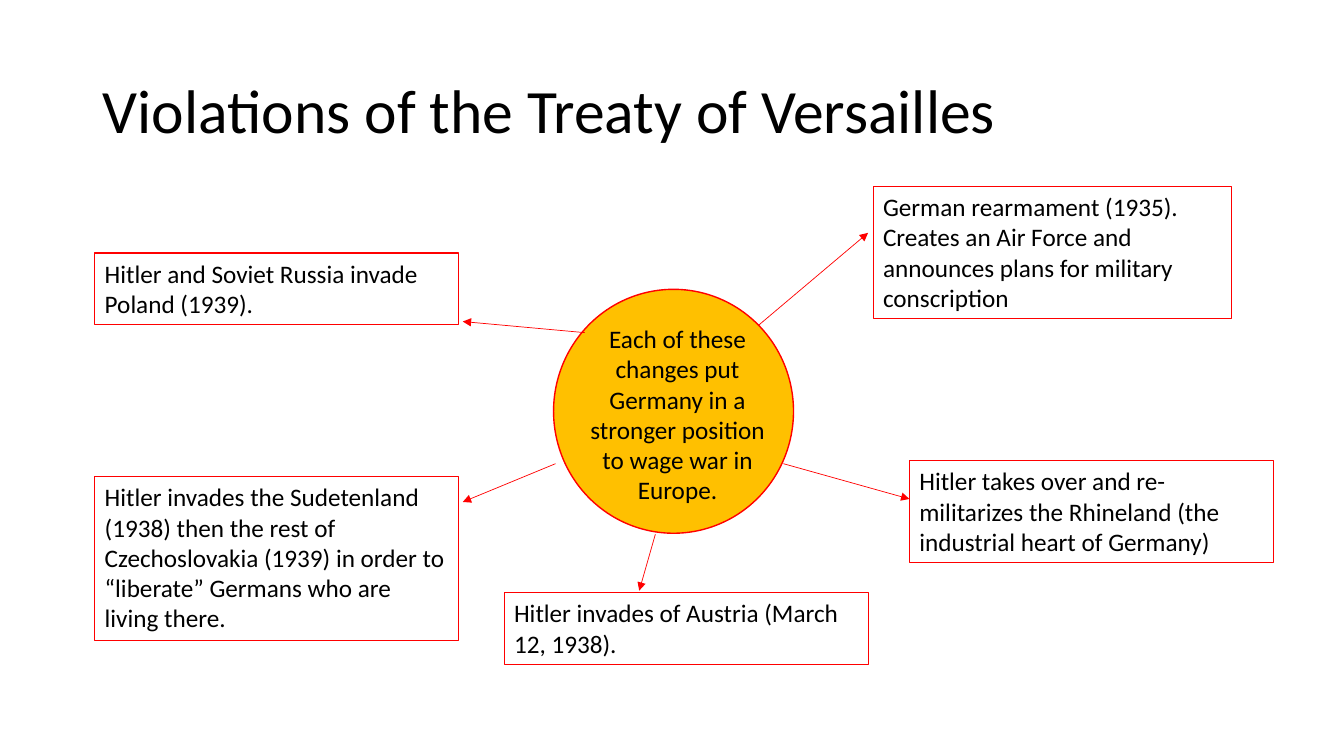
"""Build a slide mapping the violations of the Treaty of Versailles around a central point."""

import dataclasses
import typing

import pptx
import pptx.dml.color
import pptx.enum.shapes
import pptx.enum.text
import pptx.oxml
import pptx.oxml.ns
import pptx.shapes.base
import pptx.shapes.connector
import pptx.slide
import pptx.util

Inches = pptx.util.Inches
Anchor = pptx.enum.text.MSO_ANCHOR
Align = pptx.enum.text.PP_ALIGN
AutoSize = pptx.enum.text.MSO_AUTO_SIZE


@dataclasses.dataclass(frozen=True)
class Theme:
    """Colours, font and sizes of the slide."""

    font: str = "Calibri"
    ink: str = "000000"
    accent: str = "FF0000"
    hub: str = "FFC000"
    title_size: float = 44
    body_size: float = 18
    hub_line: float = 1
    note_line: float = 0.75
    arrow_line: float = 0.5


@dataclasses.dataclass(frozen=True)
class Box:
    """Position and size in inches."""

    left: float
    top: float
    width: float
    height: float

    def lengths(self) -> list[pptx.util.Length]:
        """Return the box as slide lengths."""
        return [Inches(value) for value in dataclasses.astuple(self)]


@dataclasses.dataclass(frozen=True)
class Violation:
    """A bordered note and the arrow that points to it."""

    text: str
    box: Box
    arrow_start: tuple[float, float]
    arrow_end: tuple[float, float]


THEME = Theme()
TITLE = "Violations of the Treaty of Versailles"
TITLE_BOX = Box(0.92, 0.4, 11.5, 1.45)
HUB_TEXT = "Each of these changes put Germany in a stronger position to wage war in Europe."
HUB_BOX = Box(5.49, 2.87, 2.38, 2.42)
HUB_TEXT_BOX = Box(5.73, 3.16, 1.98, 1.92)
VIOLATIONS = [
    Violation(
        "German rearmament (1935). Creates an Air Force and announces plans for military conscription",
        Box(8.66, 1.85, 3.56, 1.31), (7.52, 3.23), (8.61, 2.31),
    ),
    Violation(
        "Hitler takes over and re-militarizes the Rhineland (the industrial heart of Germany)",
        Box(9.02, 4.57, 3.61, 1.01), (7.77, 4.6), (9.02, 4.95),
    ),
    Violation(
        "Hitler invades of Austria (March 12, 1938).",
        Box(5, 5.88, 3.61, 0.71), (6.5, 5.3), (6.34, 5.86),
    ),
    Violation(
        "Hitler invades the Sudetenland (1938) then the rest of Czechoslovakia (1939) "
        "in order to “liberate” Germans who are living there.",
        Box(0.94, 4.73, 3.61, 1.62), (5.51, 4.6), (4.59, 4.98),
    ),
    Violation(
        "Hitler and Soviet Russia invade Poland (1939).",
        Box(0.94, 2.51, 3.61, 0.71), (5.8, 3.3), (4.59, 3.19),
    ),
]


def apply_format(target: typing.Any, values: dict[str, typing.Any]) -> None:
    """Set every named attribute on the target."""
    for name, value in values.items():
        setattr(target, name, value)


def rgb(colour: str) -> pptx.dml.color.RGBColor:
    """Return a colour from its hexadecimal form."""
    return pptx.dml.color.RGBColor.from_string(colour)


def set_line(shape: typing.Any, width: float) -> None:
    """Give a shape or connector an accent line."""
    shape.line.color.rgb = rgb(THEME.accent)
    shape.line.width = pptx.util.Pt(width)


def write_text(
    shape: pptx.shapes.base.BaseShape,
    text: str,
    size: float,
    frame_format: dict[str, typing.Any],
    paragraph_format: dict[str, typing.Any],
) -> None:
    """Write one formatted paragraph into a shape."""
    frame = shape.text_frame
    apply_format(frame, {"word_wrap": True, **frame_format})
    paragraph = frame.paragraphs[0]
    apply_format(paragraph, paragraph_format)
    run = paragraph.add_run()
    run.text = text
    apply_format(run.font, {"name": THEME.font, "size": pptx.util.Pt(size)})
    run.font.color.rgb = rgb(THEME.ink)


def add_title(slide: pptx.slide.Slide) -> None:
    """Place and fill the title placeholder."""
    title = slide.shapes.title
    names = ("left", "top", "width", "height")
    apply_format(title, dict(zip(names, TITLE_BOX.lengths())))
    write_text(
        title, TITLE, THEME.title_size,
        {"vertical_anchor": Anchor.MIDDLE},
        {"alignment": Align.LEFT, "line_spacing": 0.9},
    )


def add_note(
    slide: pptx.slide.Slide, text: str, box: Box, alignment: Align = Align.LEFT
) -> pptx.shapes.base.BaseShape:
    """Add a body text box that fits its text."""
    note = slide.shapes.add_textbox(*box.lengths())
    write_text(
        note, text, THEME.body_size,
        {"auto_size": AutoSize.SHAPE_TO_FIT_TEXT},
        {"alignment": alignment},
    )
    return note


def add_hub(slide: pptx.slide.Slide) -> None:
    """Add the central circle."""
    hub = slide.shapes.add_shape(pptx.enum.shapes.MSO_SHAPE.OVAL, *HUB_BOX.lengths())
    hub.shadow.inherit = False
    hub.fill.solid()
    hub.fill.fore_color.rgb = rgb(THEME.hub)
    set_line(hub, THEME.hub_line)


def add_arrow(slide: pptx.slide.Slide, violation: Violation) -> pptx.shapes.connector.Connector:
    """Add the arrow from the hub to a violation."""
    ends = [Inches(value) for value in violation.arrow_start + violation.arrow_end]
    arrow = slide.shapes.add_connector(pptx.enum.shapes.MSO_CONNECTOR.STRAIGHT, *ends)
    set_line(arrow, THEME.arrow_line)
    namespace = pptx.oxml.ns.nsdecls("a")
    arrow.line._get_or_add_ln().append(
        pptx.oxml.parse_xml(f'<a:tailEnd {namespace} type="triangle"/>')
    )
    arrow._element.spPr.append(pptx.oxml.parse_xml(f"<a:effectLst {namespace}/>"))
    return arrow


def main() -> None:
    """Build and save the presentation."""
    presentation = pptx.Presentation()
    apply_format(presentation, {"slide_width": Inches(13.33), "slide_height": Inches(7.5)})
    slide = presentation.slides.add_slide(presentation.slide_layouts.get_by_name("Title Only"))
    add_title(slide)
    add_hub(slide)
    for violation in VIOLATIONS:
        add_arrow(slide, violation)
    for violation in VIOLATIONS:
        set_line(add_note(slide, violation.text, violation.box), THEME.note_line)
    add_note(slide, HUB_TEXT, HUB_TEXT_BOX, Align.CENTER)
    presentation.save("out.pptx")


if __name__ == "__main__":
    main()
